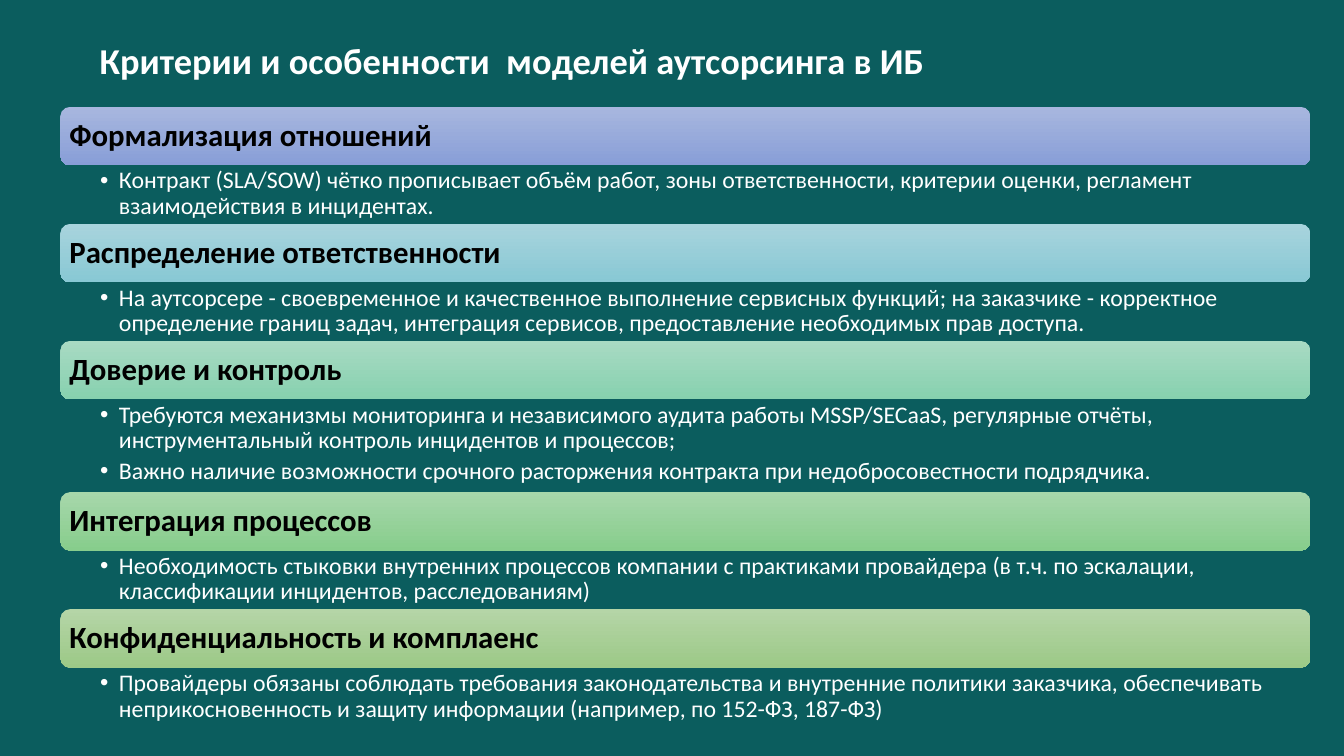
from lxml.etree import SubElement
from pptx import Presentation
from pptx.dml.color import RGBColor
from pptx.enum.shapes import MSO_SHAPE
from pptx.enum.text import MSO_ANCHOR, PP_ALIGN
from pptx.oxml.ns import qn
from pptx.util import Pt

LEFT, WIDTH, TOP = 43.2, 892.8, 76.3
BAR_H = 41.8
BODY_H = {1: 41.8, 2: 66.2}  # body height by number of bullets

# Heading, gradient top, gradient bottom, bullets
SECTIONS = [
    ("Формализация отношений", "A8B7DF", "889ED7", [
        "Контракт (SLA/SOW) чётко прописывает объём работ, зоны ответственности, "
        "критерии оценки, регламент взаимодействия в инцидентах."]),
    ("Распределение ответственности", "A8D4DD", "88C8D4", [
        "На аутсорсере - своевременное и качественное выполнение сервисных функций; "
        "на заказчике - корректное определение границ задач, интеграция сервисов, "
        "предоставление необходимых прав доступа."]),
    ("Доверие и контроль", "A8DAC3", "87D1AF", [
        "Требуются механизмы мониторинга и независимого аудита работы MSSP/SECaaS, "
        "регулярные отчёты, инструментальный контроль инцидентов и процессов;",
        "Важно наличие возможности срочного расторжения контракта при "
        "недобросовестности подрядчика."]),
    ("Интеграция процессов", "A7D7AB", "87CD8C", [
        "Необходимость стыковки внутренних процессов компании с практиками провайдера "
        "(в т.ч. по эскалации, классификации инцидентов, расследованиям)"]),
    ("Конфиденциальность и комплаенс", "B5D5A7", "9CC987", [
        "Провайдеры обязаны соблюдать требования законодательства и внутренние политики "
        "заказчика, обеспечивать неприкосновенность и защиту информации "
        "(например, по 152-ФЗ, 187-ФЗ)"]),
]


def rgb(value):
    return RGBColor.from_string(value)


class SlideBuilder:
    font = "Calibri"
    light, dark, background = "FFFFFF", "000000", "0B5D5E"

    def __init__(self, prs):
        self.s = prs.slides.add_slide(prs.slide_layouts[6])
        fill = self.s.background.fill
        fill.solid()
        fill.fore_color.rgb = rgb(self.background)

    def frame(self, sp, insets, anchor):
        tf = sp.text_frame
        tf.word_wrap = True
        tf.vertical_anchor = anchor
        tf.margin_left, tf.margin_top, tf.margin_right, tf.margin_bottom = map(Pt, insets)
        return tf

    def add_text(self, p, text, size, color, bold=False):
        p.alignment = PP_ALIGN.LEFT
        p.line_spacing = 0.9
        r = p.add_run()
        r.text = text
        r.font.name, r.font.size, r.font.bold = self.font, Pt(size), bold
        r.font.color.rgb = rgb(color)

    def title(self, text, x, y, w, h):
        sp = self.s.shapes.add_textbox(Pt(x), Pt(y), Pt(w), Pt(h))
        tf = self.frame(sp, (7.2, 3.6, 7.2, 3.6), MSO_ANCHOR.MIDDLE)
        self.add_text(tf.paragraphs[0], text, 26, self.light, True)

    def bar(self, text, top_color, bottom_color, y):
        sp = self.s.shapes.add_shape(MSO_SHAPE.ROUNDED_RECTANGLE,
                                     Pt(LEFT), Pt(y), Pt(WIDTH), Pt(BAR_H))
        sp.shadow.inherit = False
        sp.line.fill.background()
        sp.fill.gradient()
        sp.fill.gradient_angle = 270
        for stop, color in zip(sp.fill.gradient_stops, (top_color, bottom_color)):
            stop.color.rgb = rgb(color)
        tf = self.frame(sp, (4.4, 4.4, 4.4, 4.4), MSO_ANCHOR.MIDDLE)
        self.add_text(tf.paragraphs[0], text, 22, self.dark, True)

    def bullets(self, items, y, h):
        sp = self.s.shapes.add_textbox(Pt(LEFT), Pt(y), Pt(WIDTH), Pt(h))
        tf = self.frame(sp, (28.3, 2.2, 12.2, 2.2), MSO_ANCHOR.TOP)
        for i, item in enumerate(items):
            p = tf.add_paragraph() if i else tf.paragraphs[0]
            self.add_text(p, item, 17, self.light)
            p.level = 1
            p.space_after = Pt(3.6)
            pPr = p._p.get_or_add_pPr()
            pPr.set("marL", str(Pt(13.5)))
            pPr.set("indent", str(-Pt(13.5)))
            SubElement(pPr, qn("a:buFont")).set("typeface", "Arial")
            SubElement(pPr, qn("a:buChar")).set("char", "•")


def main():
    prs = Presentation()
    prs.slide_width, prs.slide_height = Pt(960), Pt(540)
    slide = SlideBuilder(prs)

    # Title
    slide.title("Критерии и особенности  моделей аутсорсинга в ИБ", 64.1, 13.7, 733.7, 61.9)

    # Stacked sections: heading bar, then its bullets
    y = TOP
    for heading, top_color, bottom_color, items in SECTIONS:
        body_h = BODY_H[len(items)]
        slide.bar(heading, top_color, bottom_color, y)
        slide.bullets(items, y + BAR_H, body_h)
        y += BAR_H + body_h

    prs.save("out.pptx")


if __name__ == "__main__":
    main()
